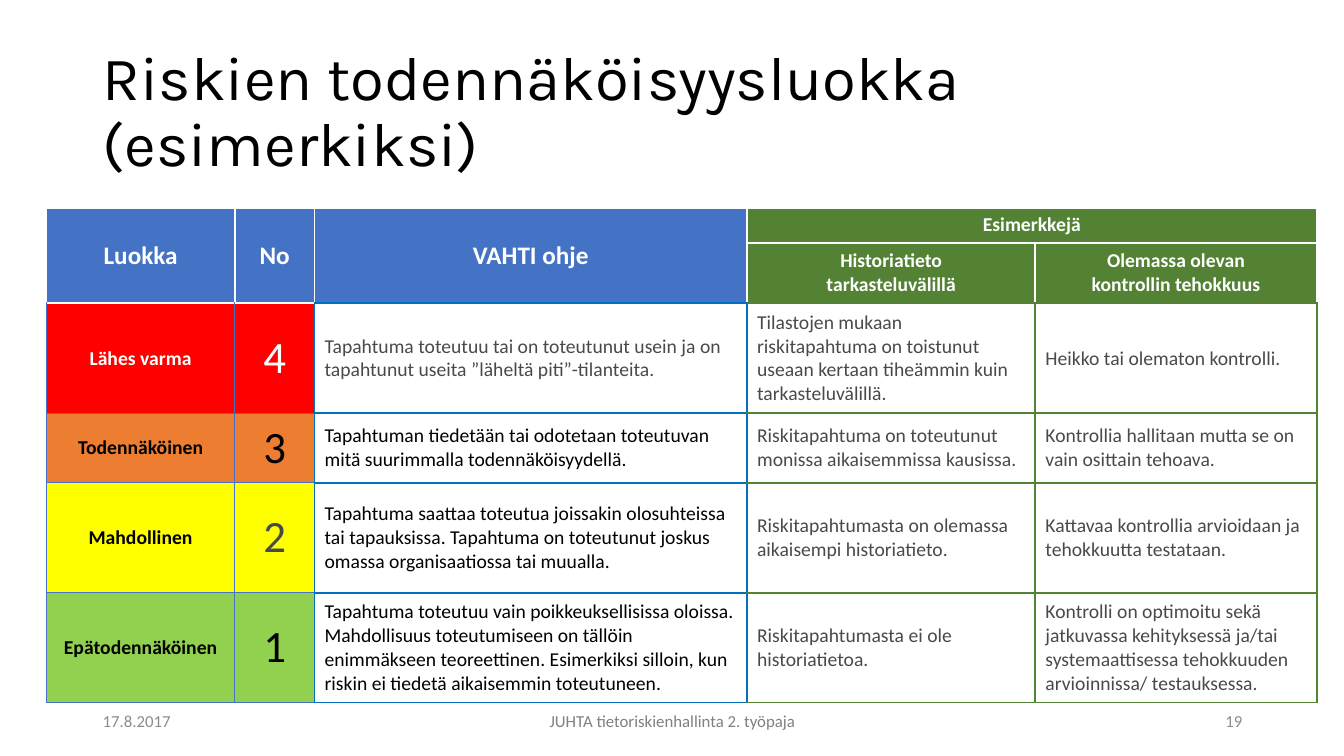
from dataclasses import dataclass

from lxml import etree
from pptx import Presentation
from pptx import util as u
from pptx.dml.color import RGBColor
from pptx.enum import text
from pptx.oxml.ns import qn

LEFT, CENTER, RIGHT = text.PP_ALIGN.LEFT, text.PP_ALIGN.CENTER, text.PP_ALIGN.RIGHT


@dataclass(frozen=True)
class Theme:
    body_font: str = "Calibri"
    title_font: str = "Karla"
    black: str = "000000"
    white: str = "FFFFFF"
    gray: str = "474A4C"
    blue: str = "4472C4"
    bright_blue: str = "0070C0"
    green: str = "548235"
    date_gray: str = "8C8C8C"
    footer_gray: str = "808080"
    title: int = 44
    number: int = 32
    header: int = 18
    body: int = 14
    footer: int = 12


T = Theme()


@dataclass(frozen=True)
class Style:
    size: int
    color: str
    bold: bool = False
    align: text.PP_ALIGN = LEFT
    font: str = T.body_font


@dataclass(frozen=True)
class Label:
    words: str
    left: float
    top: float
    width: float
    height: float
    style: Style
    line_spacing: float = 1.0


@dataclass(frozen=True)
class Header:
    words: str
    row: int
    col: int
    last_row: int
    last_col: int
    size: int
    fill: str
    bottom: str


@dataclass(frozen=True)
class Level:
    name: str
    number: int
    fill: str
    name_color: str
    number_color: str
    guide_color: str
    guide: str
    history: str
    control: str


@dataclass(frozen=True)
class Edge:
    color: str
    width: float = 1.5


@dataclass(frozen=True)
class Borders:
    left: Edge
    right: Edge
    top: Edge
    bottom: Edge


def boxed(edge: Edge) -> Borders:
    return Borders(edge, edge, edge, edge)


WHITE, BLUE, GREEN = Edge(T.white), Edge(T.bright_blue), Edge(T.green)
THIN, MEDIUM = Edge(T.blue, 0.5), Edge(T.blue, 1)
BODY_BORDERS = [
    Borders(THIN, MEDIUM, THIN, THIN),
    Borders(THIN, BLUE, THIN, THIN),
    boxed(BLUE),
    Borders(BLUE, GREEN, GREEN, GREEN),
    boxed(GREEN),
]

COLS = [1.87, 0.79, 4.29, 2.86, 2.79]
ROWS = [0.35, 0.6, 1.09, 0.69, 1.09, 1.09]

HEADERS = [
    Header("Luokka", 0, 0, 1, 0, T.header, T.blue, T.white),
    Header("No", 0, 1, 1, 1, T.header, T.blue, T.white),
    Header("VAHTI ohje", 0, 2, 1, 2, T.header, T.blue, T.bright_blue),
    Header("Esimerkkejä", 0, 3, 0, 4, T.body, T.green, T.white),
    Header("Historiatieto\ntarkasteluvälillä", 1, 3, 1, 3, T.body, T.green, T.green),
    Header("Olemassa olevan\nkontrollin tehokkuus", 1, 4, 1, 4, T.body, T.green, T.green),
]

LEVELS = [
    Level("Lähes varma", 4, "FF0000", T.white, T.white, T.gray,
          "Tapahtuma toteutuu tai on toteutunut usein ja on tapahtunut useita "
          "”läheltä piti”-tilanteita.",
          "Tilastojen mukaan riskitapahtuma on toistunut useaan kertaan tiheämmin "
          "kuin tarkasteluvälillä.",
          "Heikko tai olematon kontrolli."),
    Level("Todennäköinen", 3, "ED7D31", T.black, T.black, T.black,
          "Tapahtuman tiedetään tai odotetaan toteutuvan mitä suurimmalla "
          "todennäköisyydellä.",
          "Riskitapahtuma on toteutunut monissa aikaisemmissa kausissa.",
          "Kontrollia hallitaan mutta se on vain osittain tehoava."),
    Level("Mahdollinen", 2, "FFFF00", T.black, T.gray, T.black,
          "Tapahtuma saattaa toteutua joissakin olosuhteissa tai tapauksissa. "
          "Tapahtuma on toteutunut joskus omassa organisaatiossa tai muualla.",
          "Riskitapahtumasta on olemassa aikaisempi historiatieto.",
          "Kattavaa kontrollia arvioidaan ja tehokkuutta testataan."),
    Level("Epätodennäköinen", 1, "92D050", T.black, T.black, T.black,
          "Tapahtuma toteutuu vain poikkeuksellisissa oloissa. Mahdollisuus "
          "toteutumiseen on tällöin enimmäkseen teoreettinen. Esimerkiksi silloin, "
          "kun riskin ei tiedetä aikaisemmin toteutuneen.",
          "Riskitapahtumasta ei ole historiatietoa.",
          "Kontrolli on optimoitu sekä jatkuvassa kehityksessä ja/tai "
          "systemaattisessa tehokkuuden arvioinnissa/ testauksessa."),
]

LABELS = [
    Label("Riskien todennäköisyysluokka\n(esimerkiksi)", 0.92, 0.4, 11.5, 1.45,
          Style(T.title, T.black, font=T.title_font), 0.9),
    Label("17.8.2017", 0.92, 6.95, 3, 0.4, Style(T.footer, T.date_gray)),
    Label("JUHTA tietoriskienhallinta 2. työpaja", 4.42, 6.95, 4.5, 0.4,
          Style(T.footer, T.footer_gray, align=CENTER)),
    Label("19", 9.42, 6.95, 3, 0.4, Style(T.footer, T.date_gray, align=RIGHT)),
]


def write(tf, words: str, style: Style) -> None:
    p = tf.paragraphs[0]
    p.alignment = style.align
    for i, line in enumerate(words.split("\n")):
        if i:
            p.add_line_break()
        r = p.add_run()
        r.text = line
        r.font.name, r.font.size, r.font.bold = style.font, u.Pt(style.size), style.bold
        r.font.color.rgb = RGBColor.from_string(style.color)


def add_label(s, label: Label) -> None:
    sp = s.shapes.add_textbox(*map(u.Inches, (label.left, label.top, label.width, label.height)))
    tf = sp.text_frame
    tf.word_wrap = True
    tf.vertical_anchor = text.MSO_ANCHOR.MIDDLE
    write(tf, label.words, label.style)
    tf.paragraphs[0].line_spacing = label.line_spacing


def paint(cell, fill: str, borders: Borders) -> None:
    cell.vertical_anchor = text.MSO_ANCHOR.MIDDLE
    tcPr = cell._tc.get_or_add_tcPr()
    sides = zip("LRTB", (borders.left, borders.right, borders.top, borders.bottom))
    for side, edge in sides:
        ln = etree.SubElement(tcPr, qn(f"a:ln{side}"), w=str(u.Pt(edge.width)))
        solid = etree.SubElement(ln, qn("a:solidFill"))
        etree.SubElement(solid, qn("a:srgbClr"), val=edge.color)
    cell.fill.solid()
    cell.fill.fore_color.rgb = RGBColor.from_string(fill)


def add_header(table, h: Header) -> None:
    for row in range(h.row, h.last_row + 1):
        for col in range(h.col, h.last_col + 1):
            paint(table.cell(row, col), h.fill, Borders(WHITE, WHITE, WHITE, Edge(h.bottom)))
    cell = table.cell(h.row, h.col)
    if (h.row, h.col) != (h.last_row, h.last_col):
        cell.merge(table.cell(h.last_row, h.last_col))
    write(cell.text_frame, h.words, Style(h.size, T.white, True, CENTER))


def add_level(table, row: int, level: Level) -> None:
    entries = [
        (level.name, level.fill, Style(T.body, level.name_color, True, CENTER)),
        (str(level.number), level.fill, Style(T.number, level.number_color, align=CENTER)),
        (level.guide, T.white, Style(T.body, level.guide_color)),
        (level.history, T.white, Style(T.body, T.gray)),
        (level.control, T.white, Style(T.body, T.gray)),
    ]
    for col, (words, fill, style) in enumerate(entries):
        cell = table.cell(row, col)
        paint(cell, fill, BODY_BORDERS[col])
        write(cell.text_frame, words, style)


def add_risk_table(s) -> None:
    frame = s.shapes.add_table(len(ROWS), len(COLS), u.Inches(0.46), u.Inches(2.06),
                               u.Inches(sum(COLS)), u.Inches(sum(ROWS)))
    table = frame.table
    table.first_row = table.horz_banding = False
    for column, width in zip(table.columns, COLS):
        column.width = u.Inches(width)
    for row, height in zip(table.rows, ROWS):
        row.height = u.Inches(height)
    for h in HEADERS:
        add_header(table, h)
    for row, level in enumerate(LEVELS, start=2):
        add_level(table, row, level)


def main() -> None:
    prs = Presentation()
    prs.slide_width, prs.slide_height = u.Inches(13.33), u.Inches(7.5)
    s = prs.slides.add_slide(prs.slide_layouts[6])
    # Risk classes
    add_risk_table(s)
    # Title and footer
    for label in LABELS:
        add_label(s, label)
    prs.save("out.pptx")


if __name__ == "__main__":
    main()
